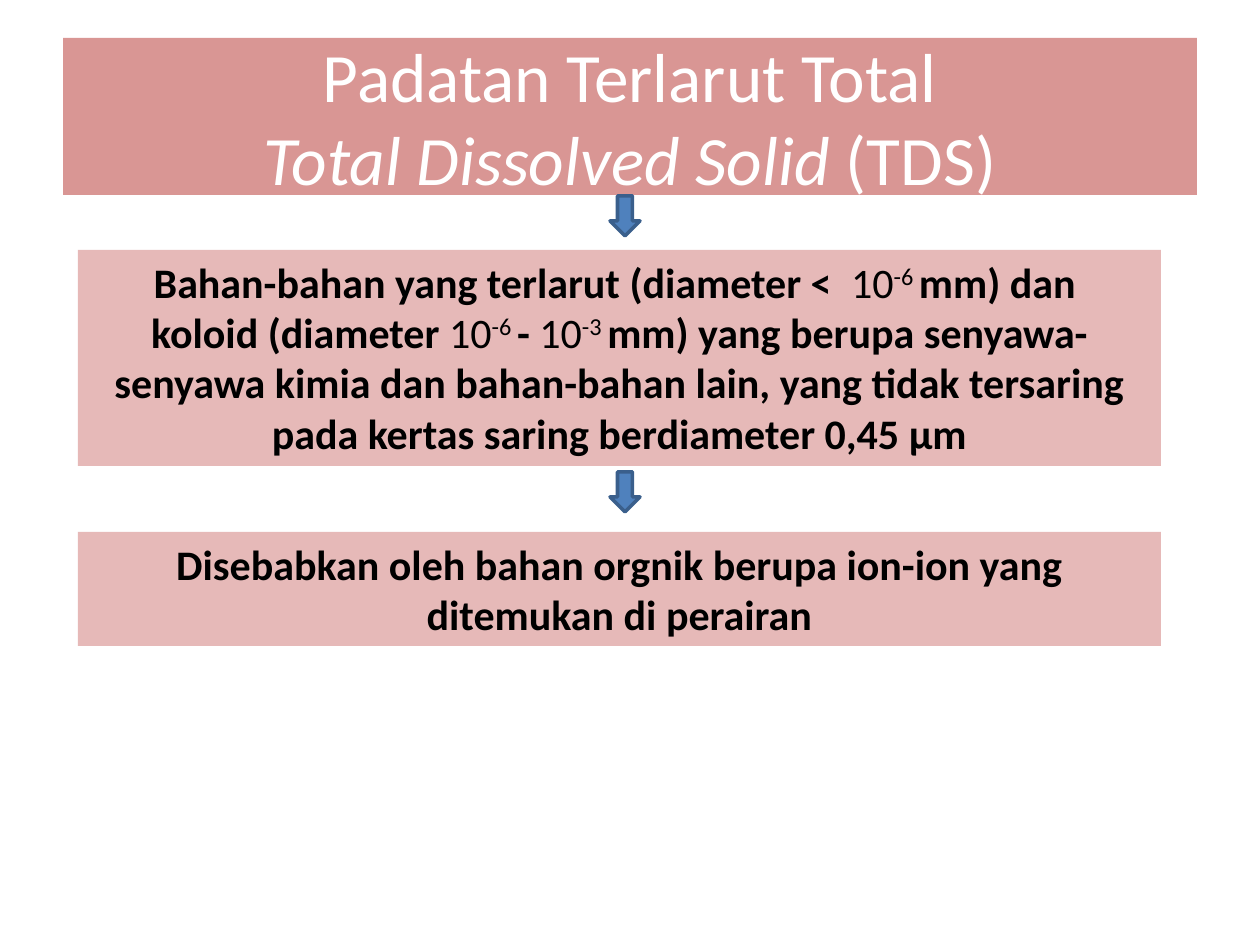
"""Build the slide on total dissolved solids (TDS)."""
from pptx import Presentation
from pptx.dml.color import RGBColor
from pptx.enum.shapes import MSO_SHAPE
from pptx.enum.text import MSO_ANCHOR, MSO_AUTO_SIZE, PP_ALIGN
from pptx.util import Emu, Pt

CENTER, MIDDLE = PP_ALIGN.CENTER, MSO_ANCHOR.MIDDLE
NO_FIT, GROW = MSO_AUTO_SIZE.NONE, MSO_AUTO_SIZE.SHAPE_TO_FIT_TEXT
DOWN_ARROW = MSO_SHAPE.DOWN_ARROW

FONT = "Calibri"
COLORS = {"title": "D99694", "box": "E6B9B8", "arrow": "4F81BD",
          "arrow_line": "3A5F8C", "white": "FFFFFF", "black": "000000"}

TITLE = [("Padatan Terlarut Total", ""), ("\n", ""),
         ("Total Dissolved Solid", "italic"), (" (TDS)", "")]
DEFINITION = [
    [("Bahan-bahan yang terlarut (diameter <  ", "bold"), ("10", ""),
     ("-6 ", "super"), ("mm) dan ", "bold")],
    [("koloid (diameter ", "bold"), ("10", ""), ("-6 ", "super"),
     ("- ", "bold"), ("10", ""), ("-3 ", "super"),
     ("mm) yang berupa senyawa-senyawa kimia dan bahan-bahan lain, yang tidak "
      "tersaring pada kertas saring berdiameter 0,45 μm", "bold")],
]
CAUSE = [[("Disebabkan oleh bahan orgnik berupa ion-ion yang ditemukan di perairan",
           "bold")]]

TITLE_AT = (63, 38, 1134, 157)
BOX_LEFT, BOX_WIDTH = 78, 1083
BOXES = [(250, 216, DEFINITION), (532, 114, CAUSE)]
ARROW_LEFT, ARROW_WIDTH, ARROW_HEIGHT = 610, 30, 40
ARROW_TOPS = [196, 472]


def px(*values):
    return [Emu(round(v * 914400 / 126)) for v in values]


def rgb(name):
    return RGBColor.from_string(COLORS[name])


def fill(sp, color):
    sp.fill.solid()
    sp.fill.fore_color.rgb = rgb(color)


def add_runs(p, runs, size, color):
    p.alignment = CENTER
    for text, style in runs:
        if text == "\n":
            p.add_line_break()
            continue
        r = p.add_run()
        r.text = text
        r.font.name, r.font.size = FONT, Pt(size)
        r.font.bold, r.font.italic = style == "bold", style == "italic"
        r.font.color.rgb = rgb(color)
        if style == "super":
            r.font._element.set("baseline", "30000")


def add_title(s):
    sp = s.shapes.title
    sp.left, sp.top, sp.width, sp.height = px(*TITLE_AT)
    fill(sp, "title")
    tf = sp.text_frame
    tf.auto_size, tf.vertical_anchor = NO_FIT, MIDDLE
    add_runs(tf.paragraphs[0], TITLE, 39.6, "white")


def add_box(s, top, height, paragraphs):
    sp = s.shapes.add_textbox(*px(BOX_LEFT, top, BOX_WIDTH, height))
    fill(sp, "box")
    tf = sp.text_frame
    tf.word_wrap, tf.auto_size = True, GROW
    for i, runs in enumerate(paragraphs):
        p = tf.add_paragraph() if i else tf.paragraphs[0]
        add_runs(p, runs, 24, "black")


def add_arrow(s, top):
    sp = s.shapes.add_shape(
        DOWN_ARROW, *px(ARROW_LEFT, top, ARROW_WIDTH, ARROW_HEIGHT))
    sp.shadow.inherit = False
    fill(sp, "arrow")
    sp.line.color.rgb = rgb("arrow_line")
    sp.line.width = Pt(2)


def main():
    prs = Presentation()
    prs.slide_width, prs.slide_height = px(1260, 945)
    s = prs.slides.add_slide(prs.slide_layouts[5])
    add_title(s)
    for box in BOXES:
        add_box(s, *box)
    for top in ARROW_TOPS:
        add_arrow(s, top)
    prs.save("out.pptx")


if __name__ == "__main__":
    main()
